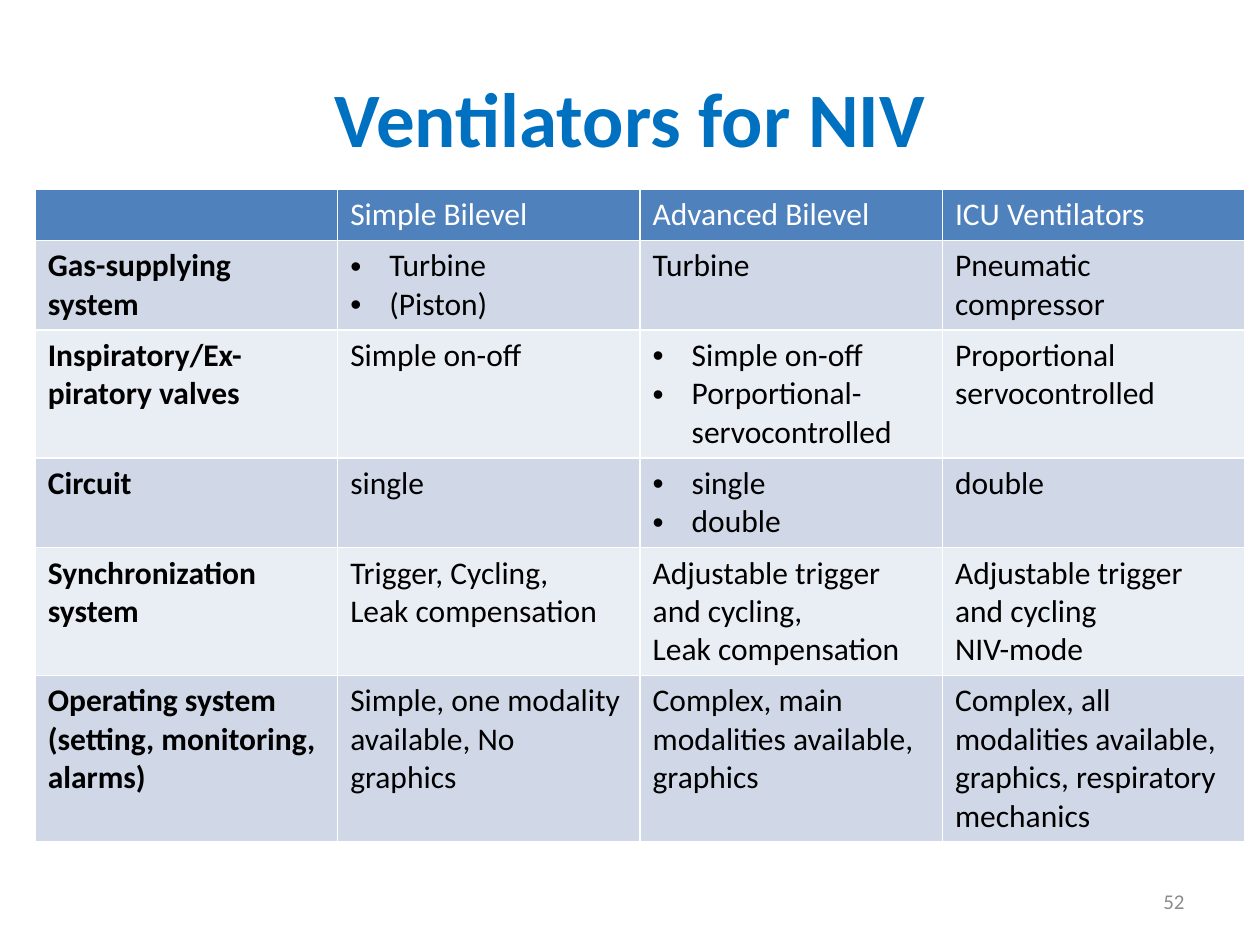
from dataclasses import dataclass

from lxml.etree import SubElement
from pptx import Presentation
from pptx.dml.color import RGBColor as RGB
from pptx.enum.text import MSO_ANCHOR as Anchor, PP_ALIGN as Align
from pptx.oxml.ns import qn
from pptx.util import Inches, Pt


@dataclass(frozen=True)
class Theme:
    font: str = "Calibri"
    title: str = "0070C0"
    header: str = "4F81BD"
    header_text: str = "FFFFFF"
    bands: tuple = ("D0D8E8", "E9EDF4")
    body: str = "000000"
    muted: str = "8C8C8C"
    title_size: int = 44
    table_size: int = 18
    number_size: int = 12


THEME = Theme()
TITLE = "Ventilators for NIV"
PAGE = "52"
BULLET = "• "
HEADERS = ("", "Simple Bilevel", "Advanced Bilevel", "ICU Ventilators")
FEATURES = [
    ("Gas-supplying system", "• Turbine\n• (Piston)", "Turbine", "Pneumatic compressor"),
    ("Inspiratory/Ex-piratory valves", "Simple on-off",
     "• Simple on-off\n• Porportional-servocontrolled", "Proportional servocontrolled"),
    ("Circuit", "single", "• single\n• double", "double"),
    ("Synchronization system", "Trigger, Cycling,\nLeak compensation",
     "Adjustable trigger and cycling,\nLeak compensation",
     "Adjustable trigger and cycling\nNIV-mode"),
    ("Operating system (setting, monitoring, alarms)",
     "Simple, one modality available, No graphics",
     "Complex, main modalities available,\ngraphics",
     "Complex, all modalities available, graphics, respiratory mechanics"),
]
ROWS = [HEADERS, *FEATURES]
COLUMN, ROW = 2.4, 0.41
INDENT = Inches(0.31)


def write(paragraph, text, size, color, bold=False, align=Align.LEFT):
    paragraph.alignment = align
    run = paragraph.add_run()
    run.text = text
    for key, value in dict(name=THEME.font, size=Pt(size), bold=bold).items():
        setattr(run.font, key, value)
    run.font.color.rgb = RGB.from_string(color)


def add_bullet(paragraph):
    properties = paragraph._p.get_or_add_pPr()
    properties.set("marL", str(INDENT))
    properties.set("indent", str(-INDENT))
    SubElement(properties, qn("a:buFont"), typeface="Arial")
    SubElement(properties, qn("a:buChar"), char=BULLET.strip())


def fill_cell(cell, text, fill, color, bold):
    cell.fill.solid()
    cell.fill.fore_color.rgb = RGB.from_string(fill)
    frame = cell.text_frame
    for i, line in enumerate(text.splitlines()):
        paragraph = frame.add_paragraph() if i else frame.paragraphs[0]
        write(paragraph, line.removeprefix(BULLET), THEME.table_size, color, bold)
        if line.startswith(BULLET):
            add_bullet(paragraph)


def add_title(slide):
    title = slide.shapes.title
    place = dict(left=0.5, top=0.3, width=9, height=1.25)
    for key, value in place.items():
        setattr(title, key, Inches(value))
    title.text_frame.vertical_anchor = Anchor.MIDDLE
    write(title.text_frame.paragraphs[0], TITLE, THEME.title_size, THEME.title,
          True, Align.CENTER)


def add_comparison(slide):
    size = (COLUMN * len(HEADERS), ROW * len(ROWS))
    table = slide.shapes.add_table(
        len(ROWS), len(HEADERS), *map(Inches, (0.28, 1.5, *size))).table
    for r, row in enumerate(ROWS):
        fill = THEME.bands[(r - 1) % 2] if r else THEME.header
        color = THEME.body if r else THEME.header_text
        for c, text in enumerate(row):
            fill_cell(table.cell(r, c), text, fill, color, bold=r > 0 and c == 0)


def add_page_number(slide):
    number = slide.shapes.add_textbox(*map(Inches, (7.17, 6.95, 2.33, 0.4))).text_frame
    number.word_wrap = True
    number.vertical_anchor = Anchor.MIDDLE
    write(number.paragraphs[0], PAGE, THEME.number_size, THEME.muted, align=Align.RIGHT)


def main():
    deck = Presentation()
    deck.slide_width, deck.slide_height = Inches(10), Inches(7.5)
    slide = deck.slides.add_slide(deck.slide_layouts.get_by_name("Title Only"))
    add_title(slide)
    add_comparison(slide)
    add_page_number(slide)
    deck.save("out.pptx")


if __name__ == "__main__":
    main()
